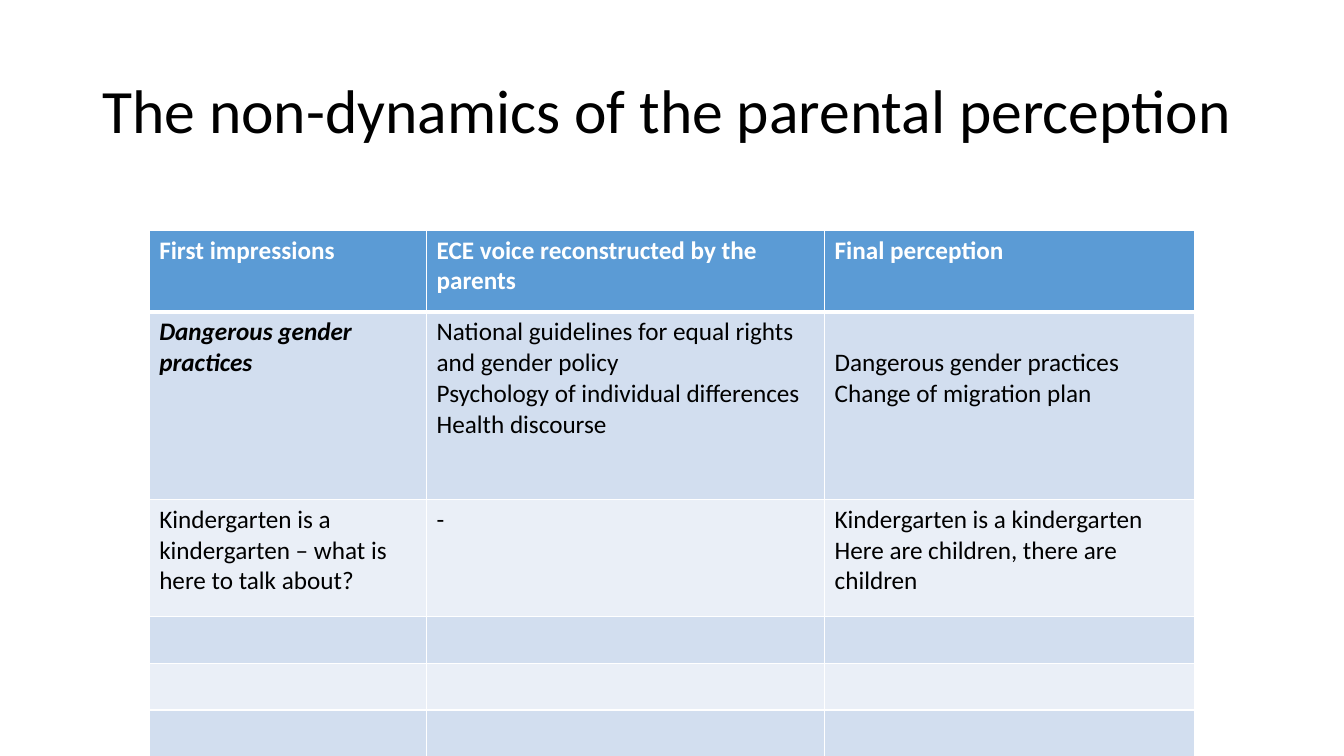
from lxml.etree import SubElement
from pptx import Presentation
from pptx.dml.color import RGBColor
from pptx.enum.text import MSO_ANCHOR
from pptx.oxml.ns import qn
from pptx.util import Cm, Pt

FONT = "Calibri"
BLACK, WHITE = "000000", "FFFFFF"
HEADER_FILL = "5B9BD5"
BAND_FILLS = ["D2DEEF", "EAEFF7"]
COLUMN_WIDTHS = [6.99, 10.03, 9.33]
ROW_HEIGHTS = [2.06, 4.72, 2.95, 1.18, 1.18, 1.18]
ROWS = [
    ["First impressions", "ECE voice reconstructed by the parents", "Final perception"],
    [
        "Dangerous gender practices",
        "National guidelines for equal rights and gender policy\n"
        "Psychology of individual differences\nHealth discourse",
        "Dangerous gender practices\nChange of migration plan",
    ],
    [
        "Kindergarten is a kindergarten – what is here to talk about?",
        "-",
        "Kindergarten is a kindergarten\nHere are children, there are children",
    ],
    *[[""] * 3 for _ in range(3)],
]


def rgb(color):
    return RGBColor.from_string(color)


def write(tf, text, size, color, bold=False, italic=False):
    tf.text = text
    for p in tf.paragraphs:
        p.font.name = FONT
        p.font.size = Pt(size)
        p.font.color.rgb = rgb(color)
        p.font.bold = bold
        p.font.italic = italic


def add_title(slide, text):
    sp = slide.shapes.add_textbox(Cm(2.33), Cm(1.01), Cm(29.21), Cm(3.68))
    tf = sp.text_frame
    tf.word_wrap = True
    tf.vertical_anchor = MSO_ANCHOR.MIDDLE
    write(tf, text, 44, BLACK)
    tf.paragraphs[0].line_spacing = 0.9


def set_borders(cell, widths):
    """Draw white borders; widths maps the sides L, R, T, B, in that order, to points."""
    tc_pr = cell._tc.get_or_add_tcPr()
    for side, width in widths.items():
        ln = SubElement(tc_pr, qn(f"a:ln{side}"), w=str(Pt(width)))
        fill = SubElement(ln, qn("a:solidFill"))
        SubElement(fill, qn("a:srgbClr"), val=WHITE)


def add_perception_table(slide):
    frame = slide.shapes.add_table(
        len(ROWS), len(COLUMN_WIDTHS), Cm(3.76), Cm(5.8),
        Cm(sum(COLUMN_WIDTHS)), Cm(sum(ROW_HEIGHTS)),
    )
    table = frame.table
    table.first_row = table.horz_banding = False
    for column, width in zip(table.columns, COLUMN_WIDTHS):
        column.width = Cm(width)
    for i, (row, height, texts) in enumerate(zip(table.rows, ROW_HEIGHTS, ROWS)):
        row.height = Cm(height)
        header = i == 0
        for j, (cell, text) in enumerate(zip(row.cells, texts)):
            emphasis = (i, j) == (1, 0)
            write(cell.text_frame, text, 18, WHITE if header else BLACK,
                  bold=header or emphasis, italic=emphasis)
            set_borders(cell, {"L": 1, "R": 1, "T": 3 if i == 1 else 1, "B": 3 if header else 1})
            cell.fill.solid()
            cell.fill.fore_color.rgb = rgb(HEADER_FILL if header else BAND_FILLS[(i - 1) % 2])
    # The final perception starts level with the second line of its row.
    table.cell(1, 2).margin_top = Cm(0.9)


def main():
    prs = Presentation()
    prs.slide_width, prs.slide_height = Cm(33.87), Cm(19.05)
    slide = prs.slides.add_slide(prs.slide_layouts[6])
    add_title(slide, "The non-dynamics of the parental perception")
    add_perception_table(slide)
    prs.save("out.pptx")


if __name__ == "__main__":
    main()
